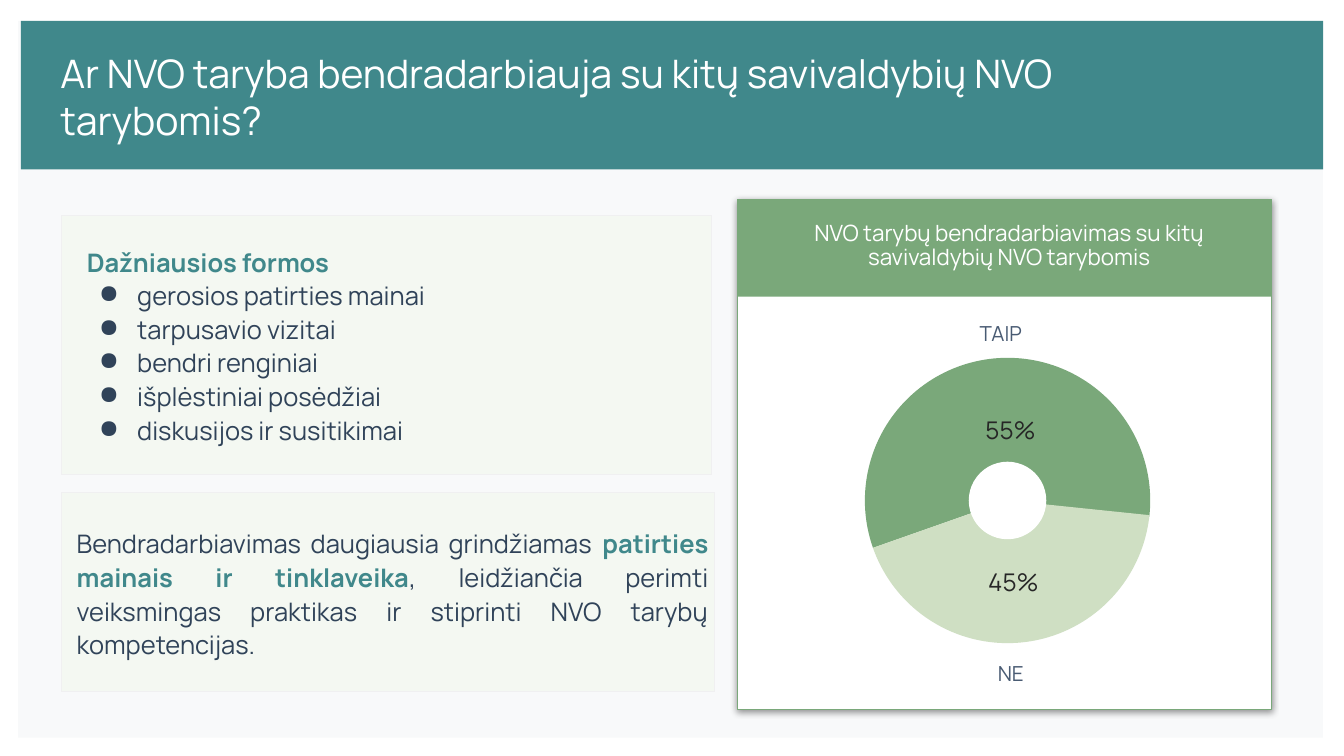
from lxml import etree
from pptx import Presentation
from pptx.dml.color import RGBColor
from pptx.enum.shapes import MSO_SHAPE as SHAPE
from pptx.enum.text import MSO_ANCHOR as ANCHOR, PP_ALIGN as ALIGN
from pptx.oxml import parse_xml
from pptx.oxml.ns import nsdecls, qn
from pptx.util import Pt

TEAL, GREEN, PALE_GREEN = "40888B", "7AA87A", "CFDFC3"
WHITE, NAVY, SLATE, DARK = "FFFFFF", "304359", "495B73", "262626"


def rgb(color):
    return RGBColor.from_string(color)


def add_shape(kind, left, top, width, height, fill, line=None):
    s = slide.shapes.add_shape(kind, Pt(left), Pt(top), Pt(width), Pt(height))
    s.shadow.inherit = False
    s.fill.solid()
    s.fill.fore_color.rgb = rgb(fill)
    if line:
        s.line.color.rgb = rgb(line)
        s.line.width = Pt(0.75)
    else:
        s.line.fill.background()
    return s


def add_text(left, top, width, height, paragraphs, size, spacing=1,
             align=ALIGN.LEFT, inset=(7.2, 3.6), anchor=ANCHOR.TOP):
    """Each paragraph is a list of (text, color, bold) runs."""
    tb = slide.shapes.add_textbox(Pt(left), Pt(top), Pt(width), Pt(height))
    tf = tb.text_frame
    tf.word_wrap = True
    tf.vertical_anchor = anchor
    tf.margin_left = tf.margin_right = Pt(inset[0])
    tf.margin_top = tf.margin_bottom = Pt(inset[1])
    for i, runs in enumerate(paragraphs):
        p = tf.add_paragraph() if i else tf.paragraphs[0]
        p.alignment = align
        p.line_spacing = spacing
        for text, color, bold in runs:
            r = p.add_run()
            r.text = text
            r.font.name = "Manrope"
            r.font.size = Pt(size)
            r.font.bold = bold
            r.font.color.rgb = rgb(color)
    return tf


prs = Presentation()
prs.slide_width, prs.slide_height = Pt(960), Pt(540)
slide = prs.slides.add_slide(prs.slide_layouts[6])

# Background panel
add_shape(SHAPE.RECTANGLE, 13, 15, 932, 512, "F8F9FA")

# Chart card with a soft shadow
card = add_shape(SHAPE.RECTANGLE, 527, 142.5, 381.6, 364.4, WHITE, GREEN)
effects = card._element.spPr.find(qn("a:effectLst"))
effects.append(parse_xml(
    f'<a:outerShdw {nsdecls("a")} blurRad="{Pt(4.5)}" dist="{Pt(1.5)}" dir="5400000" '
    'algn="t" rotWithShape="0"><a:srgbClr val="000000"><a:alpha val="41000"/>'
    '</a:srgbClr></a:outerShdw>'))

# Ring: two sectors (start and end in degrees) and a hole
for color, start, end in [(GREEN, 160.6, 6.53), (PALE_GREEN, 5.91, 160.62)]:
    sector = add_shape(SHAPE.PIE, 617.8, 255.6, 203.8, 203.8, color)
    sector.adjustments[0] = start * 0.6
    sector.adjustments[1] = end * 0.6
add_shape(SHAPE.OVAL, 692, 329.8, 55.4, 55.4, WHITE)

# Ring labels and values
for label, left, top in [("NE", 705.6, 470.2), ("TAIP", 692.6, 227.5)]:
    add_text(left, top, 190, 23, [[(label, SLATE, False)]], 14.8, 0.9)
for value, left, top in [("55%", 671.8, 290.9), ("45%", 673.9, 399.6)]:
    add_text(left, top, 100, 32.4, [[(value, DARK, False)]], 17.4,
             align=ALIGN.CENTER, inset=(11.5, 5.8))

# Title banner
add_shape(SHAPE.RECTANGLE, 15, 15, 930.2, 106, TEAL)
title = "Ar NVO taryba bendradarbiauja su kitų savivaldybių NVO tarybomis?"
add_text(36, 31.7, 870, 75, [[(title, WHITE, False)]], 28)

# Card header
add_shape(SHAPE.RECTANGLE, 527, 142.5, 381.6, 69.5, GREEN)
header = "NVO tarybų bendradarbiavimas su kitų savivaldybių NVO tarybomis"
add_text(545.8, 154.8, 350, 42.5, [[(header, WHITE, False)]], 16, 0.9, ALIGN.CENTER)

# Most common forms
add_shape(SHAPE.RECTANGLE, 44, 154.1, 464.4, 185, "F4F8F2", "F0F0F1")
forms = ["gerosios patirties mainai", "tarpusavio vizitai", "bendri renginiai",
         "išplėstiniai posėdžiai", "diskusijos ir susitikimai"]
tf = add_text(62, 161.3, 370.8, 169.5,
              [[("Dažniausios formos", TEAL, True)]] + [[(f, NAVY, False)] for f in forms],
              18.2, 1.1, inset=(0, 0), anchor=ANCHOR.MIDDLE)
for p in tf.paragraphs[1:]:
    pPr = p._p.get_or_add_pPr()
    pPr.set("marL", str(Pt(36)))
    pPr.set("indent", str(Pt(-27.4)))
    bullet_color = etree.SubElement(pPr, qn("a:buClr"))
    etree.SubElement(bullet_color, qn("a:srgbClr"), val=NAVY)
    etree.SubElement(pPr, qn("a:buChar"), char="●")

# Conclusion
add_shape(SHAPE.RECTANGLE, 44, 352.1, 466.6, 141.8, "F4F8F2", "F0F0F1")
conclusion = [
    ("Bendradarbiavimas daugiausia grindžiamas ", NAVY, False),
    ("patirties mainais ir tinklaveika", TEAL, True),
    (", leidžiančia perimti veiksmingas praktikas ir stiprinti NVO tarybų kompetencijas.",
     NAVY, False),
]
add_text(54.8, 360.7, 451.4, 125.3, [conclusion], 18.2, 1.1, ALIGN.JUSTIFY,
         inset=(0, 0), anchor=ANCHOR.MIDDLE)

prs.save("out.pptx")
